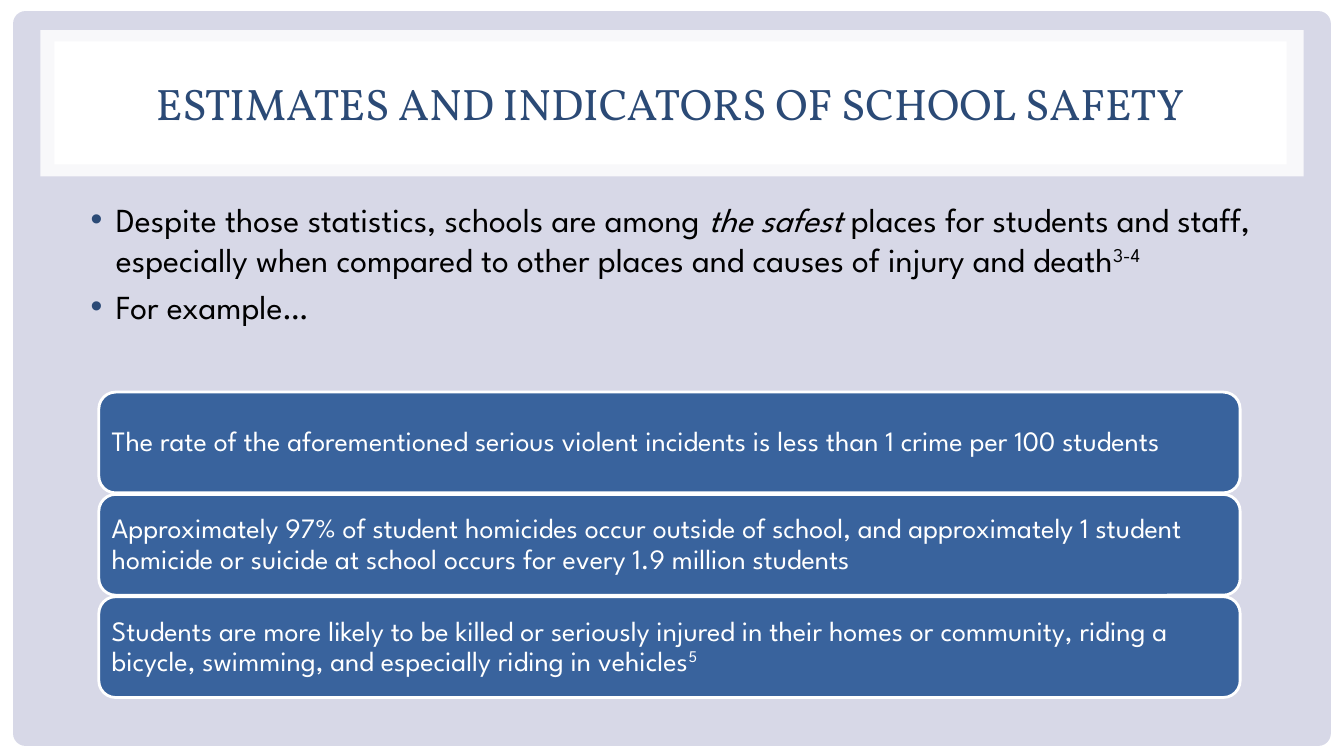
from dataclasses import dataclass
from typing import NamedTuple

from lxml import etree
from pptx import Presentation
from pptx.dml.color import RGBColor
from pptx.enum import shapes, text
from pptx.oxml.ns import qn
from pptx.util import Inches, Pt


@dataclass(frozen=True)
class Theme:
    lilac: str = "D7D8E7"
    white: str = "FFFFFF"
    black: str = "000000"
    navy: str = "2B4A76"
    blue: str = "39639D"
    title_font: str = "Vollkorn"
    body_font: str = "League Spartan"
    title_size: float = 31.5
    body_size: float = 24
    card_size: float = 20


class Box(NamedTuple):
    left: float
    top: float
    width: float
    height: float


class Panel(NamedTuple):
    box: Box
    fill: str
    alpha: int = 100
    corner: float | None = None


class Run(NamedTuple):
    words: str
    italic: bool = False
    superscript: bool = False


THEME = Theme()

PANELS = [
    Panel(Box(0, 0, 13.33, 7.5), THEME.white),
    Panel(Box(0.13, 0.11, 13.07, 7.29), THEME.lilac, corner=0.017),
    Panel(Box(0.4, 0.3, 12.53, 1.45), THEME.white, alpha=83),
    Panel(Box(0.54, 0.41, 12.22, 1.22), THEME.white),
]
TITLE = Run("ESTIMATES AND INDICATORS OF SCHOOL SAFETY")
BULLETS = [
    [
        Run("Despite those statistics, schools are among "),
        Run("the safest ", italic=True),
        Run("places for students and staff, especially when compared to "
            "other places and causes of injury and death"),
        Run("3-4", superscript=True),
    ],
    [Run("For example…")],
]
CARDS = [
    [Run("The rate of the aforementioned serious violent incidents is less "
         "than 1 crime per 100 students")],
    [Run("Approximately 97% of student homicides occur outside of school, and "
         "approximately 1 student homicide or suicide at school occurs for "
         "every 1.9 million students")],
    [
        Run("Students are more likely to be killed or seriously injured in "
            "their homes or community, riding a bicycle, swimming, and "
            "especially riding in vehicles"),
        Run("5", superscript=True),
    ],
]
FIRST_CARD = Box(0.98, 3.89, 11.32, 1)
CARD_PITCH = 1.015


def rgb(value: str) -> RGBColor:
    return RGBColor.from_string(value)


def add_text(p, runs: list[Run], *, font: str, size: float, color: str) -> None:
    for run in runs:
        r = p.add_run()
        r.text = run.words
        r.font.name = font
        r.font.size = Pt(size)
        r.font.color.rgb = rgb(color)
        r.font.italic = run.italic
        if run.superscript:
            r.font._element.set("baseline", "30000")


def add_block(slide, box: Box, fill: str, rounded: bool):
    kind = shapes.MSO_SHAPE.ROUNDED_RECTANGLE if rounded else shapes.MSO_SHAPE.RECTANGLE
    sp = slide.shapes.add_shape(kind, *map(Inches, box))
    sp.shadow.inherit = False
    sp.fill.solid()
    sp.fill.fore_color.rgb = rgb(fill)
    sp.line.fill.background()
    return sp


def add_panel(slide, panel: Panel) -> None:
    sp = add_block(slide, panel.box, panel.fill, panel.corner is not None)
    if panel.corner is not None:
        sp.adjustments[0] = panel.corner
    if panel.alpha < 100:
        color = sp._element.spPr.find(qn("a:solidFill"))[0]
        etree.SubElement(color, qn("a:alpha")).set("val", str(panel.alpha * 1000))


def add_card(slide, box: Box, runs: list[Run]) -> None:
    sp = add_block(slide, box, THEME.blue, rounded=True)
    sp.line.color.rgb = rgb(THEME.white)
    sp.line.width = Pt(2)
    tf = sp.text_frame
    tf.word_wrap = True
    tf.vertical_anchor = text.MSO_ANCHOR.MIDDLE
    tf.margin_left = tf.margin_right = tf.margin_top = tf.margin_bottom = Inches(0.08)
    p = tf.paragraphs[0]
    p.alignment = text.PP_ALIGN.LEFT
    p.line_spacing = 0.9
    add_text(p, runs, font=THEME.body_font, size=THEME.card_size, color=THEME.white)


def place(slide, sp, box: Box):
    """Position a placeholder in front of the panels and return its text frame."""
    sp.left, sp.top, sp.width, sp.height = map(Inches, box)
    slide.shapes._spTree.append(sp._element)
    tf = sp.text_frame
    tf.auto_size = text.MSO_AUTO_SIZE.NONE
    tf.word_wrap = True
    return tf


def set_bullet(p) -> None:
    pPr = p._p.get_or_add_pPr()
    pPr.set("marL", str(Inches(0.38)))
    pPr.set("indent", str(Inches(-0.25)))
    color = etree.SubElement(pPr, qn("a:buClr"))
    etree.SubElement(color, qn("a:srgbClr")).set("val", THEME.navy)
    etree.SubElement(pPr, qn("a:buFont")).set("typeface", "Arial")
    etree.SubElement(pPr, qn("a:buChar")).set("char", "•")


def main() -> None:
    prs = Presentation()
    prs.slide_width, prs.slide_height = Inches(13.33), Inches(7.5)
    slide = prs.slides.add_slide(prs.slide_layouts[1])

    # Backdrop and title frame
    slide.background.fill.solid()
    slide.background.fill.fore_color.rgb = rgb(THEME.lilac)
    for panel in PANELS:
        add_panel(slide, panel)

    # Title
    tf = place(slide, slide.shapes.title, Box(0.62, 0.45, 12.05, 1.14))
    tf.vertical_anchor = text.MSO_ANCHOR.MIDDLE
    p = tf.paragraphs[0]
    p.alignment = text.PP_ALIGN.CENTER
    add_text(p, [TITLE], font=THEME.title_font, size=THEME.title_size, color=THEME.navy)

    # Bulleted list
    tf = place(slide, slide.placeholders[1], Box(0.67, 1.92, 12, 4.78))
    for i, runs in enumerate(BULLETS):
        p = tf.add_paragraph() if i else tf.paragraphs[0]
        set_bullet(p)
        add_text(p, runs, font=THEME.body_font, size=THEME.body_size, color=THEME.black)

    # Example cards
    for i, runs in enumerate(CARDS):
        box = FIRST_CARD._replace(top=FIRST_CARD.top + i * CARD_PITCH)
        add_card(slide, box, runs)

    prs.save("out.pptx")


if __name__ == "__main__":
    main()
